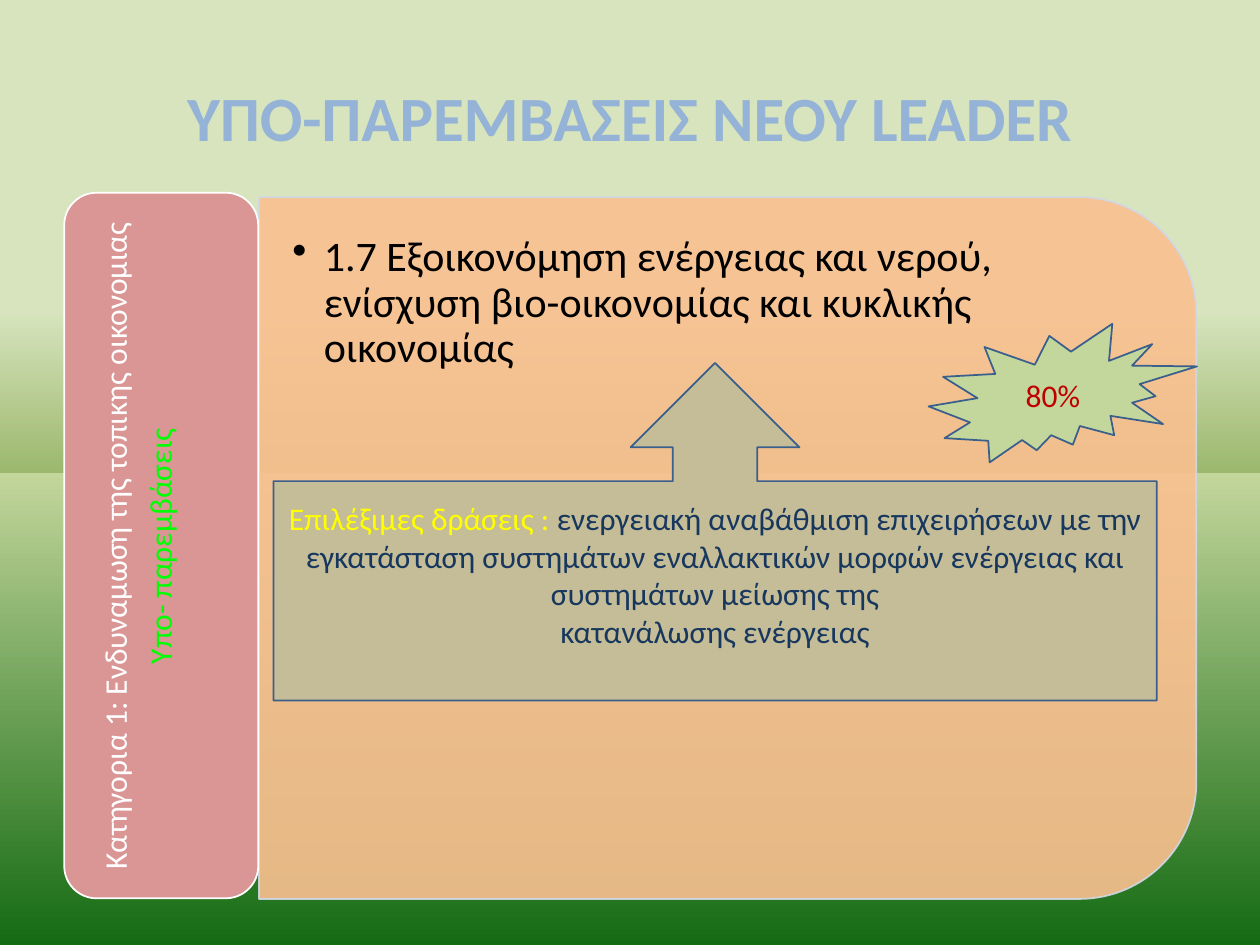
from lxml.etree import SubElement
from pptx import Presentation
from pptx.dml.color import RGBColor
from pptx.enum.shapes import MSO_SHAPE as Shape
from pptx.enum.text import MSO_ANCHOR as Anchor, PP_ALIGN as Align
from pptx.oxml import parse_xml
from pptx.oxml.ns import nsdecls, qn
from pptx.util import Inches, Pt

FONT = "Calibri"
OUTLINE = "3A5F8C"
SKY = [(0, "D7E4BD"), (33, "D7E4BD"), (50, "9CB86E"), (50, "C3D69B"), (100, "156B13")]

TITLE = [[("ΥΠΟ-ΠΑΡΕΜΒΑΣΕΙΣ ΝΕΟΥ LEADER", "95B3D7")]]
MEASURE = [[("1.7 Εξοικονόμηση ενέργειας και νερού, ενίσχυση βιο-οικονομίας "
             "και κυκλικής οικονομίας", "000000")]]
CATEGORY = [
    [("Κατηγορια 1: Ενδυναμωση της τοπικης οικονομιας", "FFFFFF")],
    [("Υπο- παρεμβάσεις", "00FF00")],
]
ACTIONS = [
    [("Επιλέξιμες δράσεις : ", "FFFF00"),
     ("ενεργειακή αναβάθμιση επιχειρήσεων με την", "17375E")],
    [("εγκατάσταση συστημάτων εναλλακτικών μορφών ενέργειας και "
      "συστημάτων μείωσης της", "17375E")],
    [("κατανάλωσης ενέργειας", "17375E")],
]
RATE = [[("80%", "C00000")]]


def color(value):
    return RGBColor.from_string(value)


def paint_background(slide, stops):
    slide.background.fill.solid()
    properties = slide.background._cSld.find(qn("p:bg")).find(qn("p:bgPr"))
    marks = "".join(f'<a:gs pos="{share * 1000}"><a:srgbClr val="{value}"/></a:gs>'
                    for share, value in stops)
    gradient = parse_xml(f'<a:gradFill {nsdecls("a")} rotWithShape="1"><a:gsLst>{marks}'
                         '</a:gsLst><a:lin ang="5400000" scaled="0"/></a:gradFill>')
    properties.replace(properties.find(qn("a:solidFill")), gradient)


def add_shape(slide, kind, area, fill, line):
    shape = slide.shapes.add_shape(kind, *map(Inches, area))
    shape.shadow.inherit = False
    shape.fill.solid()
    shape.fill.fore_color.rgb = color(fill)
    shape.line.color.rgb = color(line)
    shape.line.width = Pt(1)
    return shape


def add_box(slide, area):
    return slide.shapes.add_textbox(*map(Inches, area))


def write(box, paragraphs, size=18, bold=False, align=Align.CENTER,
          anchor=Anchor.MIDDLE, insets=(0.1, 0.05, 0.1, 0.05), spacing=1, after=0):
    frame = box.text_frame
    frame.word_wrap = True
    frame.vertical_anchor = anchor
    (frame.margin_left, frame.margin_top,
     frame.margin_right, frame.margin_bottom) = map(Inches, insets)
    for index, runs in enumerate(paragraphs):
        para = frame.add_paragraph() if index else frame.paragraphs[0]
        para.alignment = align
        para.line_spacing = spacing
        para.space_after = Pt(after)
        for text, value in runs:
            span = para.add_run()
            span.text = text
            span.font.name = FONT
            span.font.size = Pt(size)
            span.font.bold = bold
            span.font.color.rgb = color(value)


def add_bullet(para, indent):
    properties = para._p.get_or_add_pPr()
    properties.set("marL", str(Inches(indent)))
    properties.set("indent", str(-Inches(indent)))
    SubElement(properties, qn("a:buChar")).set("char", "•")


def make_translucent(shape, percent):
    for tint in shape._element.spPr.iter(qn("a:srgbClr")):
        SubElement(tint, qn("a:alpha")).set("val", str(percent * 1000))


deck = Presentation()
deck.slide_width, deck.slide_height = Inches(10), Inches(7.5)
slide = deck.slides.add_slide(deck.slide_layouts[6])
paint_background(slide, SKY)

write(add_box(slide, (0.5, 0.3, 9, 1.25)), TITLE, size=36, bold=True)

panel = add_shape(slide, Shape.ROUND_2_SAME_RECTANGLE, (2.99, 0.63, 5.57, 7.44),
                  "FAC090", "D0D8E8")
panel.rotation = 90
make_translucent(panel, 90)

measure = add_box(slide, (2.05, 1.84, 7.17, 1.2))
write(measure, MEASURE, size=24, align=Align.LEFT, anchor=Anchor.TOP,
      insets=(0.27, 0.03, 0.27, 0), spacing=0.9)
add_bullet(measure.text_frame.paragraphs[0], 0.25)

add_shape(slide, Shape.ROUNDED_RECTANGLE, (0.51, 1.53, 1.54, 5.6), "D99694", "FFFFFF")
category = add_box(slide, (0.79, 1.61, 1.19, 5.45))
write(category, CATEGORY, anchor=Anchor.TOP, insets=(0, 0, 0, 0), spacing=0.9, after=6.3)
category.text_frame._txBody.bodyPr.set("vert", "vert270")

callout = add_shape(slide, Shape.UP_ARROW_CALLOUT, (2.17, 2.88, 7.01, 2.68),
                    "C4BD97", OUTLINE)
write(callout, ACTIONS, anchor=Anchor.TOP, insets=(0.1, 0.14, 0.1, 0.05))

burst = add_shape(slide, Shape.EXPLOSION2, (7.37, 2.57, 2.13, 1.1), "C3D69B", OUTLINE)
write(burst, RATE)

deck.save("out.pptx")
